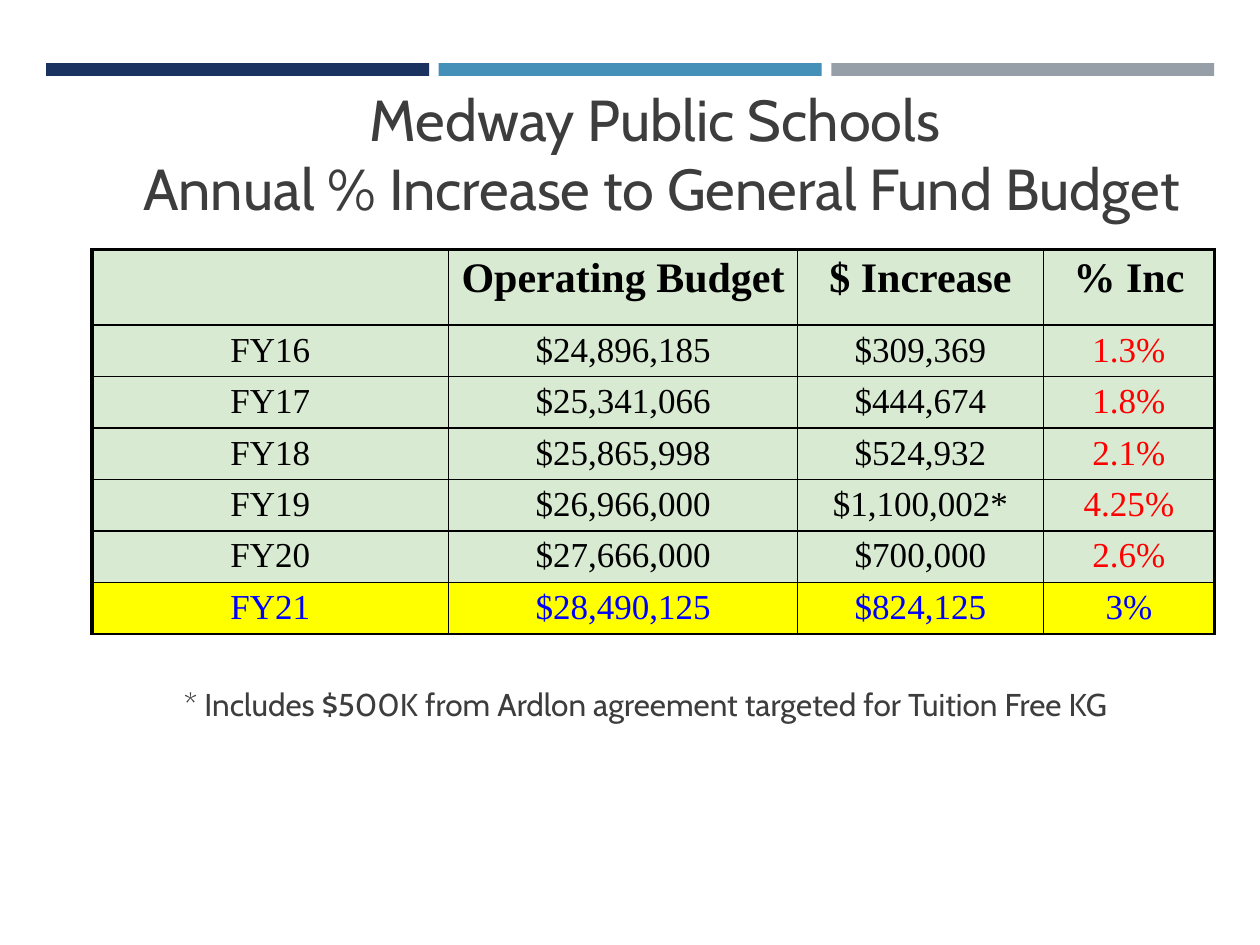
from lxml import etree
from pptx import Presentation
from pptx.dml.color import RGBColor
from pptx.enum.shapes import MSO_SHAPE
from pptx.enum.text import MSO_ANCHOR, MSO_AUTO_SIZE, PP_ALIGN
from pptx.oxml.ns import qn
from pptx.util import Pt

RECTANGLE = MSO_SHAPE.RECTANGLE
CENTER = PP_ALIGN.CENTER
TOP, MIDDLE = MSO_ANCHOR.TOP, MSO_ANCHOR.MIDDLE
NO_FIT = MSO_AUTO_SIZE.NONE
TITLE_ONLY = 5

COLORS = {
    "navy": "1A3260", "blue": "4590B8", "gray": "969FA7", "text": "3D3D3D",
    "black": "000000", "green": "D9EAD3", "yellow": "FFFF00",
    "percent": "FF0000", "current": "0000FF",
}

HEADINGS = ["", "Operating Budget", "$ Increase", "% Inc"]
BUDGETS = [
    ["FY16", "$24,896,185", "$309,369", "1.3%"],
    ["FY17", "$25,341,066", "$444,674", "1.8%"],
    ["FY18", "$25,865,998", "$524,932", "2.1%"],
    ["FY19", "$26,966,000", "$1,100,002*", "4.25%"],
    ["FY20", "$27,666,000", "$700,000", "2.6%"],
    ["FY21", "$28,490,125", "$824,125", "3%"],
]
COLUMN_WIDTHS = [203.8, 199.4, 140.4, 97.9]
HEADER_HEIGHT, ROW_HEIGHT = 43.2, 29.45


def color(name):
    return RGBColor.from_string(COLORS[name])


def write(frame, text, *, font="Cabin", size=18, ink="text", bold=False):
    for index, line in enumerate(text.split("\n")):
        para = frame.paragraphs[0] if index == 0 else frame.add_paragraph()
        para.alignment = CENTER
        if line:
            span = para.add_run()
            span.text = line
            span.font.name = font
            span.font.size = Pt(size)
            span.font.bold = bold
            span.font.color.rgb = color(ink)


class SlideBuilder:
    def __init__(self, page):
        self.page = page

    def bar(self, left, top, width, height, fill):
        box = self.page.shapes.add_shape(
            RECTANGLE, Pt(left), Pt(top), Pt(width), Pt(height))
        box.shadow.inherit = False
        box.fill.solid()
        box.fill.fore_color.rgb = color(fill)
        box.line.fill.background()

    def title(self, text, left, top, width, height):
        box = self.page.shapes.title
        box.left, box.top = Pt(left), Pt(top)
        box.width, box.height = Pt(width), Pt(height)
        frame = box.text_frame
        frame.auto_size = NO_FIT
        frame.word_wrap = True
        frame.vertical_anchor = MIDDLE
        write(frame, text, size=33)

    def note(self, text, left, top, width, height):
        box = self.page.shapes.add_textbox(
            Pt(left), Pt(top), Pt(width), Pt(height))
        frame = box.text_frame
        frame.word_wrap = True
        frame.margin_top = frame.margin_bottom = Pt(7.2)
        write(frame, text)

    def table(self, left, top):
        rows = [HEADINGS] + BUDGETS
        heights = [HEADER_HEIGHT] + [ROW_HEIGHT] * len(BUDGETS)
        grid = self.page.shapes.add_table(
            len(rows), len(HEADINGS), Pt(left), Pt(top),
            Pt(sum(COLUMN_WIDTHS)), Pt(sum(heights))).table
        for column, width in zip(grid.columns, COLUMN_WIDTHS):
            column.width = Pt(width)
        for row, height in zip(grid.rows, heights):
            row.height = Pt(height)
        last_row, last_column = len(rows) - 1, len(HEADINGS) - 1
        for r, values in enumerate(rows):
            for c, value in enumerate(values):
                ink = "black"
                if r == last_row:
                    ink = "current"
                elif r > 0 and c == last_column:
                    ink = "percent"
                cell = grid.cell(r, c)
                self.cell(cell, value, ink=ink, header=r == 0,
                          fill="yellow" if r == last_row else "green")
                self.borders(cell, {
                    "a:lnL": 2.25 if c == 0 else 1,
                    "a:lnR": 2.25 if c == last_column else 1,
                    "a:lnT": 2.25 if r == 0 else 1,
                    "a:lnB": 1,
                })

    def cell(self, cell, text, *, ink, header, fill):
        cell.fill.solid()
        cell.fill.fore_color.rgb = color(fill)
        cell.margin_top = cell.margin_bottom = Pt(3.2)
        cell.vertical_anchor = TOP
        write(cell.text_frame, text, font="Times New Roman",
              size=24 if header else 20, ink=ink, bold=header)

    def borders(self, cell, widths):
        properties = cell._tc.get_or_add_tcPr()
        for index, (tag, width) in enumerate(widths.items()):
            line = etree.Element(qn(tag), w=str(int(Pt(width))))
            fill = etree.SubElement(line, qn("a:solidFill"))
            etree.SubElement(fill, qn("a:srgbClr"), val=COLORS["black"])
            properties.insert(index, line)


def main():
    deck = Presentation()
    deck.slide_width, deck.slide_height = Pt(720), Pt(540)
    page = deck.slides.add_slide(deck.slide_layouts[TITLE_ONLY])
    builder = SlideBuilder(page)
    for index, fill in enumerate(["navy", "blue", "gray"]):
        builder.bar(26.4 + index * 224.3, 36, 218.8, 7.4, fill)
    builder.title("Medway Public Schools \nAnnual % Increase to General Fund Budget",
                  72, 56.2, 612, 62)
    builder.table(52.6, 142.6)
    builder.note("* Includes $500K from Ardlon agreement targeted for Tuition Free KG",
                 89.3, 384.5, 559.4, 41)
    deck.save("out.pptx")


if __name__ == "__main__":
    main()
